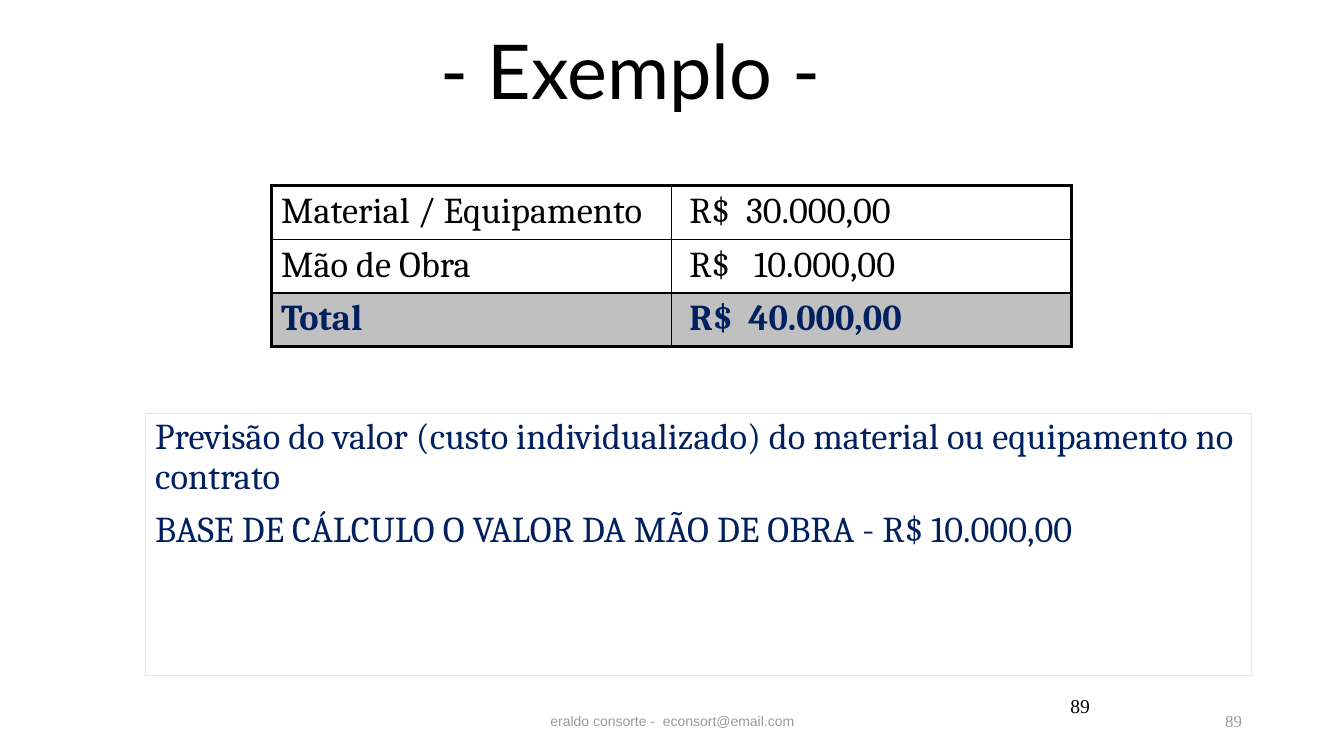
from lxml.etree import SubElement
from pptx import Presentation
from pptx.dml.color import RGBColor
from pptx.enum.text import MSO_ANCHOR, MSO_AUTO_SIZE, PP_ALIGN
from pptx.oxml.ns import qn
from pptx.util import Pt

BLACK, NAVY, GRAY, SILVER, PALE = "000000", "002060", "9B9A98", "C0C0C0", "E7E6E6"
THICK, THIN = 2.25, 1


def color(value):
    return RGBColor.from_string(value)


class SlideBuilder:
    title_font = {"name": "Lato", "size": Pt(54), "bold": False}
    text_font = {"name": "Cambria", "size": Pt(26), "bold": False}
    total_font = {**text_font, "bold": True}
    footer_font = {"name": "Arial", "size": Pt(10)}
    number_font = {"name": "Times New Roman", "size": Pt(12)}
    large_number_font = {**number_font, "size": Pt(14)}

    def __init__(self, presentation):
        self.slide = presentation.slides.add_slide(presentation.slide_layouts[1])

    def place(self, shape, box):
        for name, value in zip(("left", "top", "width", "height"), box):
            setattr(shape, name, Pt(value))

    def fill_text(self, frame, lines, font, hex_color, **layout):
        frame.text = "\n".join(lines)
        for paragraph in frame.paragraphs:
            for name, value in layout.items():
                setattr(paragraph, name, value)
            for run in paragraph.runs:
                for name, value in font.items():
                    setattr(run.font, name, value)
                run.font.color.rgb = color(hex_color)

    def title(self, text, box):
        shape = self.slide.shapes.title
        self.place(shape, box)
        self.fill_text(shape.text_frame, [text], self.title_font, BLACK,
                       alignment=PP_ALIGN.CENTER, line_spacing=0.9)
        shape.text_frame.vertical_anchor = MSO_ANCHOR.MIDDLE
        shape.text_frame.auto_size = MSO_AUTO_SIZE.NONE

    def body(self, lines, box):
        shape = self.slide.placeholders[1]
        self.place(shape, box)
        shape.line.color.rgb = color(PALE)
        shape.line.width = Pt(0.75)
        frame = shape.text_frame
        frame.auto_size = MSO_AUTO_SIZE.NONE
        self.fill_text(frame, lines, self.text_font, NAVY,
                       line_spacing=0.9, space_before=Pt(10))
        for paragraph in frame.paragraphs:
            properties = paragraph._p.get_or_add_pPr()
            properties.set("marL", "0")
            properties.set("indent", "0")
            SubElement(properties, qn("a:buNone"))

    def text(self, text, box, font, hex_color, alignment, anchor):
        frame = self.slide.shapes.add_textbox(*map(Pt, box)).text_frame
        frame.word_wrap = True
        frame.vertical_anchor = anchor
        self.fill_text(frame, [text], font, hex_color, alignment=alignment)

    def borders(self, cell, widths):
        properties = cell._tc.get_or_add_tcPr()
        for index, (side, width) in enumerate(widths.items()):
            line = SubElement(properties, qn(f"a:ln{side}"), w=str(Pt(width)))
            fill = SubElement(line, qn("a:solidFill"))
            SubElement(fill, qn("a:srgbClr"), val=BLACK)
            properties.insert(index, line)

    def table(self, rows, box):
        row_count, column_count = len(rows), len(rows[0])
        table = self.slide.shapes.add_table(row_count, column_count, *map(Pt, box)).table
        table.first_row = table.horz_banding = False
        for row, values in enumerate(rows):
            is_total = row == row_count - 1
            for column, value in enumerate(values):
                cell = table.cell(row, column)
                self.fill_text(cell.text_frame, [value],
                               self.total_font if is_total else self.text_font,
                               NAVY if is_total else BLACK)
                if is_total:
                    cell.fill.solid()
                    cell.fill.fore_color.rgb = color(SILVER)
                else:
                    cell.fill.background()
                outer = {"L": column == 0, "R": column == column_count - 1,
                         "T": row == 0, "B": is_total}
                self.borders(cell, {side: THICK if edge else THIN
                                    for side, edge in outer.items()})


def main():
    presentation = Presentation()
    presentation.slide_width, presentation.slide_height = Pt(960), Pt(540)
    builder = SlideBuilder(presentation)
    builder.title("- Exemplo -", (156.2, 21.6, 588.2, 63.4))
    builder.body(["Previsão do valor (custo individualizado) do material ou equipamento no contrato",
                  "BASE DE CÁLCULO O VALOR DA MÃO DE OBRA - R$ 10.000,00"],
                 (103.7, 295.2, 790.6, 187.2))
    builder.text("eraldo consorte -  econsort@email.com", (318.2, 500.4, 324, 28.8),
                 builder.footer_font, GRAY, PP_ALIGN.CENTER, MSO_ANCHOR.MIDDLE)
    builder.text("89", (678.2, 500.4, 216, 28.8),
                 builder.number_font, GRAY, PP_ALIGN.RIGHT, MSO_ANCHOR.MIDDLE)
    builder.table([["Material / Equipamento", " R$  30.000,00"],
                   ["Mão de Obra", " R$   10.000,00"],
                   ["Total", " R$  40.000,00"]], (193.7, 132.5, 571.6, 115.2))
    builder.text("89", (635.8, 491.8, 149.8, 36),
                 builder.large_number_font, BLACK, PP_ALIGN.RIGHT, MSO_ANCHOR.TOP)
    presentation.save("out.pptx")


if __name__ == "__main__":
    main()
